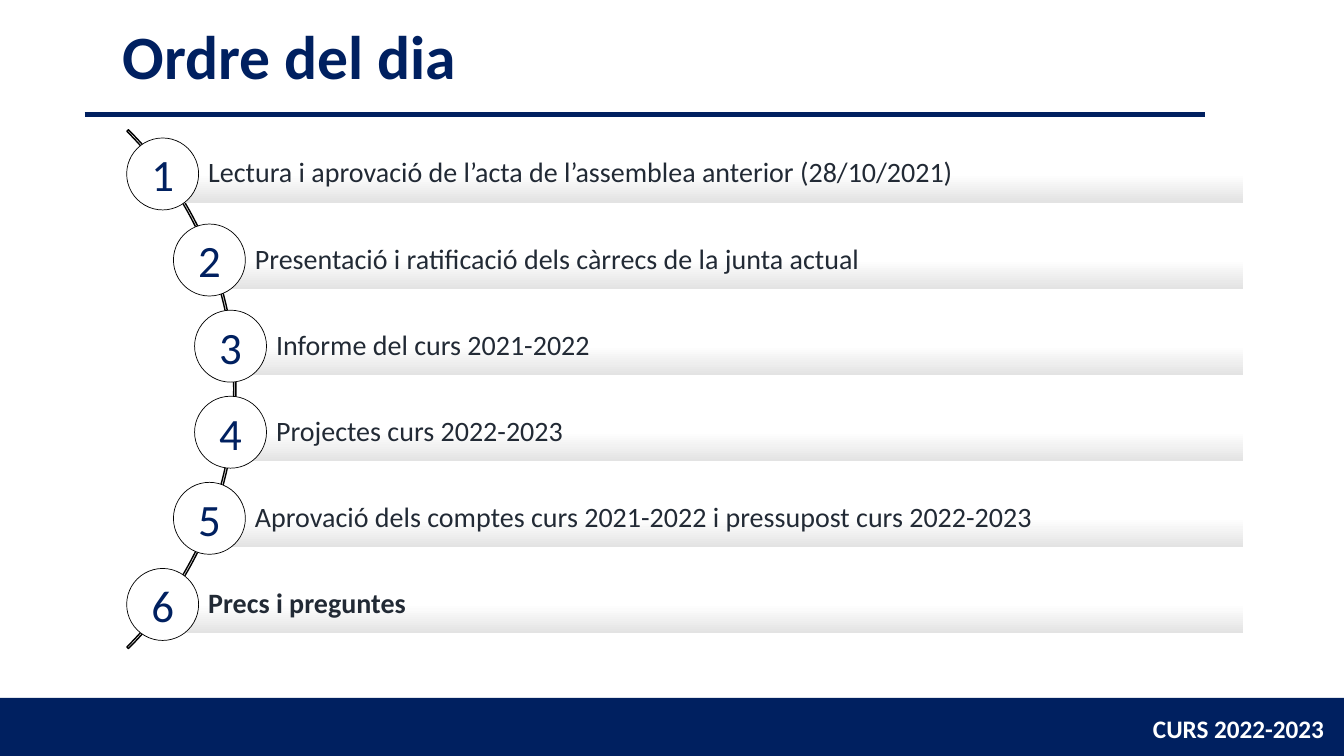
import copy
import math
import pptx
import pptx.dml.color
import pptx.enum.shapes
import pptx.enum.text
import pptx.oxml.ns
import pptx.util

Pt = pptx.util.Pt
Shape = pptx.enum.shapes.MSO_SHAPE
Align = pptx.enum.text.PP_ALIGN
Anchor = pptx.enum.text.MSO_ANCHOR
qn = pptx.oxml.ns.qn

WIDE, HIGH = 960, 540
NAVY, WHITE, BLACK, SLATE, GREY = "002060", "FFFFFF", "000000", "222A35", "E3E3E3"
ITEMS = [
    "Lectura i aprovació de l’acta de l’assemblea anterior (28/10/2021)",
    "Presentació i ratificació dels càrrecs de la junta actual",
    "Informe del curs 2021-2022",
    "Projectes curs 2022-2023",
    "Aprovació dels comptes curs 2021-2022 i pressupost curs 2022-2023",
    "Precs i preguntes",
]


def color(text):
    return pptx.dml.color.RGBColor.from_string(text)


def place(shape, box):
    shape.left, shape.top, shape.width, shape.height = map(Pt, box)


def write(shape, text, size, ink, bold=False, align=Align.LEFT,
          anchor=Anchor.MIDDLE, pad=(7.2, 3.6, 7.2, 3.6)):
    frame = shape.text_frame
    frame.text = text
    frame.word_wrap = True
    frame.auto_size = pptx.enum.text.MSO_AUTO_SIZE.NONE
    frame.vertical_anchor = anchor
    (frame.margin_left, frame.margin_top,
     frame.margin_right, frame.margin_bottom) = map(Pt, pad)
    line = frame.paragraphs[0]
    line.alignment = align
    font = line.font
    font.name, font.size, font.bold = "Calibri", Pt(size), bold
    font.color.rgb = color(ink)
    return line


def draw(slide, kind, box, fill=None, edge=None, width=1):
    shape = slide.shapes.add_shape(kind, *map(Pt, box))
    shape.shadow.inherit = False
    if fill:
        shape.fill.solid()
        shape.fill.fore_color.rgb = color(fill)
    else:
        shape.fill.background()
    if edge:
        shape.line.color.rgb = color(edge)
        shape.line.width = Pt(width)
    else:
        shape.line.fill.background()
    return shape


def shade(shape):
    """Fill with white that turns grey in the lower half."""
    shape.fill.gradient()
    shape.fill.gradient_angle = 270
    stops = shape._element.spPr.find(".//" + qn("a:gsLst"))
    stops.insert(0, copy.deepcopy(stops[0]))
    rules = [(0, WHITE), (0.5, WHITE), (1, GREY)]
    for stop, (spot, tint) in zip(shape.fill.gradient_stops, rules):
        stop.position = spot
        stop.color.rgb = color(tint)


def add_head(slide, box):
    left, top, width, height = box
    title = slide.shapes.title
    place(title, (left + 20, top, 400, 60.5))
    write(title, "Ordre del dia", 44, NAVY, bold=True, anchor=Anchor.TOP)
    base = top + height
    rule = slide.shapes.add_connector(
        pptx.enum.shapes.MSO_CONNECTOR.STRAIGHT,
        *map(Pt, (left, base, left + width, base)))
    rule.line.color.rgb = color(NAVY)
    rule.line.width = Pt(3.5)
    rule._element.spPr.append(pptx.oxml.parse_xml(
        '<a:effectLst xmlns:a="http://schemas.openxmlformats.org/drawingml/2006/main"/>'))


def add_foot(slide, box):
    left, top, width, height = box
    draw(slide, Shape.RECTANGLE, box, NAVY)
    label = slide.shapes.add_textbox(
        *map(Pt, (left + width - 143.5, top + 7.5, 144, 29)))
    write(label, "CURS 2022-2023", 18, WHITE, bold=True, anchor=Anchor.TOP)


def add_list(slide, box):
    """Set numbered bars along an arc whose circle is centred left of the box."""
    left, top, width, height = box
    right, mid = left + width, top + height / 2
    hub, outer, track = left - 183.5, 262, 260
    step, disc, thick = 61.5, 51.4, 41

    arc = draw(slide, Shape.BLOCK_ARC,
               (hub - outer, mid - outer, 2 * outer, 2 * outer), edge=BLACK)
    for index, value in enumerate((189, 27, 0.003)):
        arc.adjustments[index] = value

    last = len(ITEMS) - 1
    for index, text in enumerate(ITEMS):
        rise = (index - last / 2) * step
        x, y = hub + math.sqrt(track ** 2 - rise ** 2), mid + rise
        bar = draw(slide, Shape.RECTANGLE, (x, y - thick / 2, right - x, thick))
        shade(bar)
        line = write(bar, text, 20, SLATE, bold=index == last,
                     pad=(32.5, 4, 4, 4))
        line.line_spacing = 0.9
        ring = draw(slide, Shape.OVAL, (x - disc / 2, y - disc / 2, disc, disc),
                    WHITE, BLACK, 0.5)
        write(ring, str(index + 1), 32, NAVY, align=Align.CENTER,
              pad=(0, 0, 0, 0))


def main():
    deck = pptx.Presentation()
    deck.slide_width, deck.slide_height = Pt(WIDE), Pt(HIGH)
    slide = deck.slides.add_slide(deck.slide_layouts[5])
    add_foot(slide, (0, 498.5, WIDE, 41.5))
    add_head(slide, (60.5, 9.5, 800.5, 72.5))
    add_list(slide, (90, 92, 798, 372))
    deck.save("out.pptx")


if __name__ == "__main__":
    main()
